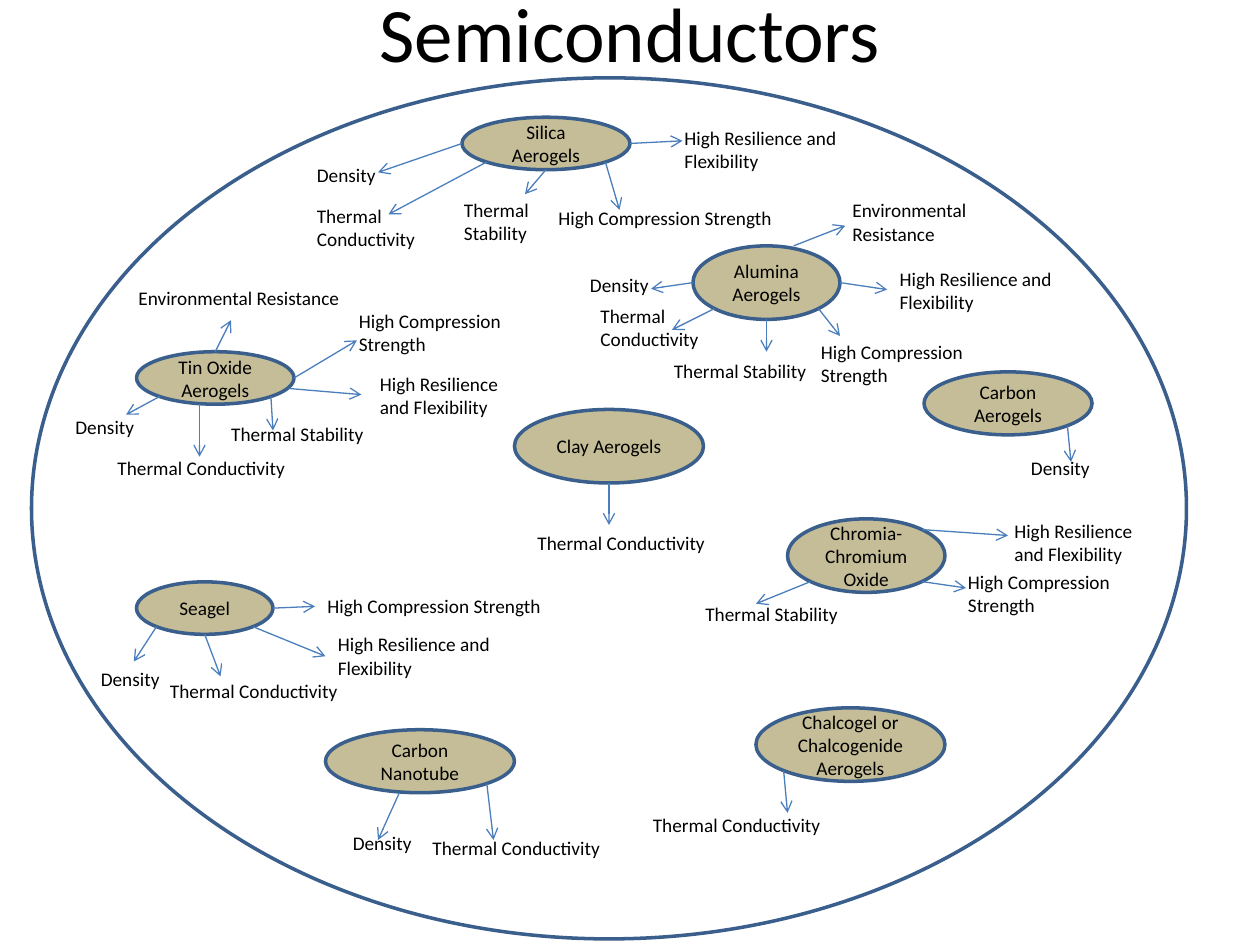
from math import cos, radians, sin

from lxml.etree import SubElement
from pptx import Presentation
from pptx.dml.color import RGBColor
from pptx.enum.shapes import MSO_CONNECTOR, MSO_SHAPE
from pptx.enum.text import MSO_ANCHOR, MSO_AUTO_SIZE, PP_ALIGN
from pptx.oxml.ns import qn
from pptx.util import Pt

FONT = "Calibri"
BLACK, WHITE, TAN = "000000", "FFFFFF", "C4BD97"
OUTLINE, ARROW = "3A5F8C", "4B7EBC"
LINE_HEIGHT, TEXT_PADDING = 13, 8

# Connection sites of an ellipse, anticlockwise from the top
TOP, TOP_LEFT, LEFT, LOW_LEFT, BOTTOM, LOW_RIGHT, RIGHT, TOP_RIGHT = range(8)

DENSITY = "Density"
CONDUCTIVITY = "Thermal Conductivity"
STABILITY = "Thermal Stability"
COMPRESSION = "High Compression Strength"
RESILIENCE = "High Resilience and Flexibility"
ENVIRONMENT = "Environmental Resistance"

# Material, its ellipse, then its properties:
# (text, lines, (left, top, width), arrow start as site or point, arrow end)
MATERIALS = [
    ("Silica Aerogels", (264, 67, 96, 30), [
        (DENSITY, 1, (174, 90, 72), LEFT, (216, 98.5)),
        (CONDUCTIVITY, 2, (174, 113, 78), LOW_LEFT, (222, 122.5)),
        (STABILITY, 2, (258, 109.5, 60), BOTTOM, (300, 111)),
        (COMPRESSION, 1, (312, 114.5, 138.5), LOW_RIGHT, (354, 120)),
        (RESILIENCE, 2, (384, 68.5, 102), RIGHT, (390, 80.5)),
    ]),
    ("Tin Oxide Aerogels", (78, 201, 90, 30), [
        (DENSITY, 1, (36, 234, 51), LOW_LEFT, (72, 237)),
        (CONDUCTIVITY, 1, (60, 257, 132), (114, 231), (114, 261)),
        (COMPRESSION, 2, (198, 173, 96), RIGHT, (204, 194.5)),
        (RESILIENCE, 2, (210, 209, 90), (165, 222), (206.5, 225.5)),
        (ENVIRONMENT, 1, (72, 160, 144), TOP, (132, 183)),
        (STABILITY, 1, (125, 237.5, 96), LOW_RIGHT, (156, 246)),
    ]),
    ("Carbon Aerogels", (528, 212.5, 96, 36), [
        (DENSITY, 1, (582, 257, 54), LOW_RIGHT, (612, 264)),
    ]),
    ("Alumina Aerogels", (396, 140.5, 84, 42), [
        (DENSITY, 1, (330, 152.5, 51), LEFT, (372, 165)),
        (CONDUCTIVITY, 2, (336, 170.5, 84), LOW_LEFT, (384, 188.5)),
        (STABILITY, 1, (378, 201.5, 108), BOTTOM, (438, 201)),
        (COMPRESSION, 2, (462, 191, 96.5), LOW_RIGHT, (480, 192)),
        (RESILIENCE, 2, (507, 149, 120), RIGHT, (507, 165.5)),
        (ENVIRONMENT, 2, (480, 110, 96), (453.5, 140.5), (483, 129)),
    ]),
    ("Clay Aerogels", (294, 234, 108, 42), [
        (CONDUCTIVITY, 1, (300, 300, 120), BOTTOM, (348, 300)),
    ]),
    ("Chromia-Chromium Oxide", (450, 296.5, 90, 42), [
        (STABILITY, 1, (396, 340.5, 91), LOW_LEFT, (432, 345)),
        (COMPRESSION, 2, (546, 322.5, 96), LOW_RIGHT, (552, 336)),
        (RESILIENCE, 2, (572.5, 293, 90), TOP_RIGHT, (576, 306)),
    ]),
    ("Seagel", (78, 332.5, 78, 30), [
        (DENSITY, 1, (50.5, 378, 51), LOW_LEFT, (76.5, 378)),
        (CONDUCTIVITY, 1, (90, 384.5, 120), BOTTOM, (126, 386.5)),
        (COMPRESSION, 1, (180, 336, 150), RIGHT, (180, 346.5)),
        (RESILIENCE, 2, (186, 358, 108), LOW_RIGHT, (186, 375)),
    ]),
    ("Chalcogel or Chalcogenide Aerogels", (432, 404.5, 108, 42), [
        (CONDUCTIVITY, 1, (366, 461, 114), LOW_LEFT, (450, 464.5)),
    ]),
    ("Carbon Nanotube", (186, 417, 108, 36), [
        (DENSITY, 1, (194.5, 471.5, 51), (228, 453.5), (216, 480)),
        (CONDUCTIVITY, 1, (240, 474.5, 120), LOW_RIGHT, (282, 480)),
    ]),
]


def rgb(value):
    return RGBColor.from_string(value)


def write(tf, text, size=11, align=PP_ALIGN.LEFT):
    tf.word_wrap = True
    p = tf.paragraphs[0]
    p.text = text
    p.alignment = align
    p.font.name = FONT
    p.font.size = Pt(size)
    p.font.color.rgb = rgb(BLACK)


def add_title(s, text):
    sp = s.shapes.title
    sp.left, sp.top, sp.width, sp.height = Pt(36), Pt(-27), Pt(648), Pt(90)
    sp.text_frame.vertical_anchor = MSO_ANCHOR.MIDDLE
    write(sp.text_frame, text, 44, PP_ALIGN.CENTER)


def add_ellipse(s, box, fill, text=None):
    sp = s.shapes.add_shape(MSO_SHAPE.OVAL, *map(Pt, box))
    sp.shadow.inherit = False
    sp.fill.solid()
    sp.fill.fore_color.rgb = rgb(fill)
    sp.line.color.rgb = rgb(OUTLINE)
    sp.line.width = Pt(2)
    if text:
        sp.text_frame.vertical_anchor = MSO_ANCHOR.MIDDLE
        write(sp.text_frame, text, align=PP_ALIGN.CENTER)
    return sp


def add_label(s, text, lines, left, top, width):
    height = lines * LINE_HEIGHT + TEXT_PADDING
    sp = s.shapes.add_textbox(Pt(left), Pt(top), Pt(width), Pt(height))
    write(sp.text_frame, text)
    sp.text_frame.auto_size = MSO_AUTO_SIZE.SHAPE_TO_FIT_TEXT


def site_point(box, site):
    left, top, width, height = box
    angle = radians(90 + 45 * site)
    return (left + width / 2 * (1 + cos(angle)),
            top + height / 2 * (1 - sin(angle)))


def add_arrow(s, ellipse, box, start, end):
    at_site = isinstance(start, int)
    begin = site_point(box, start) if at_site else start
    cxn = s.shapes.add_connector(MSO_CONNECTOR.STRAIGHT, *map(Pt, begin + end))
    cxn.line.color.rgb = rgb(ARROW)
    cxn.line.width = Pt(0.75)
    # Open arrowhead, no shadow
    SubElement(cxn.line._get_or_add_ln(), qn("a:tailEnd"), type="arrow")
    SubElement(cxn._element.spPr, qn("a:effectLst"))
    # begin_connect knows only four sites, an ellipse has eight
    if at_site:
        props = cxn._element.find(".//" + qn("p:cNvCxnSpPr"))
        SubElement(props, qn("a:stCxn"), id=str(ellipse.shape_id), idx=str(start))


def add_material(s, name, box, properties):
    ellipse = add_ellipse(s, box, TAN, name)
    for text, lines, place, start, end in properties:
        add_label(s, text, lines, *place)
        add_arrow(s, ellipse, box, start, end)


def main():
    prs = Presentation()
    prs.slide_width, prs.slide_height = Pt(720), Pt(540)
    s = prs.slides.add_slide(prs.slide_layouts[5])
    add_title(s, "Semiconductors")

    # Enclosing set, then its members
    add_ellipse(s, (18, 44.5, 660, 492), WHITE)
    for material in MATERIALS:
        add_material(s, *material)
    prs.save("out.pptx")


if __name__ == "__main__":
    main()
